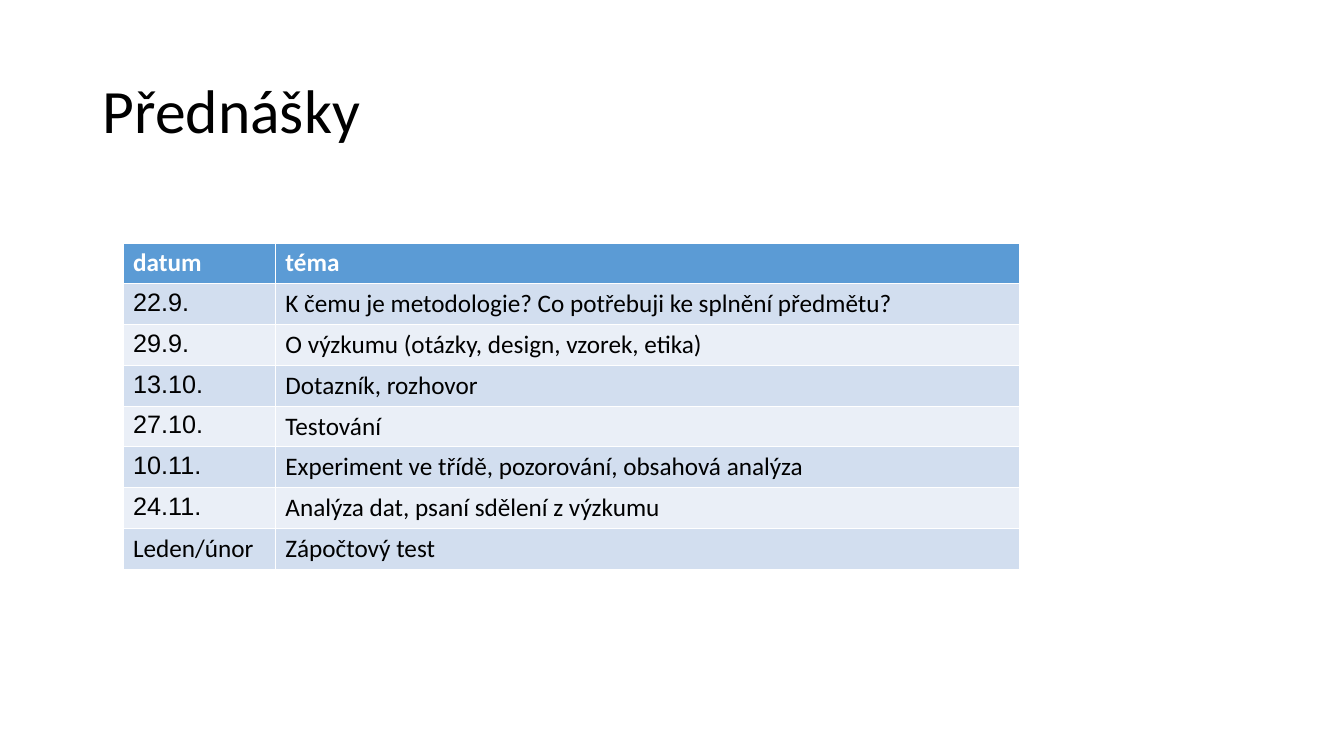
from pptx import Presentation
from pptx.dml.color import RGBColor
from pptx.enum.text import MSO_ANCHOR
from pptx.util import Inches, Pt

WHITE = RGBColor(0xFF, 0xFF, 0xFF)
BLACK = RGBColor(0x00, 0x00, 0x00)
HEADER_BLUE = RGBColor(0x5B, 0x9B, 0xD5)
BANDS = (RGBColor(0xEA, 0xEF, 0xF7), RGBColor(0xD2, 0xDE, 0xEF))

SLIDE_WIDTH, SLIDE_HEIGHT = 13.33, 7.5
DATE_SHARE = 0.17

LECTURES = [
    ("datum", "téma"),
    ("22.9.", "K čemu je metodologie? Co potřebuji ke splnění předmětu?"),
    ("29.9.", "O výzkumu (otázky, design, vzorek, etika)"),
    ("13.10.", "Dotazník, rozhovor"),
    ("27.10.", "Testování"),
    ("10.11.", "Experiment ve třídě, pozorování, obsahová analýza"),
    ("24.11.", "Analýza dat, psaní sdělení z výzkumu"),
    ("Leden/únor", "Zápočtový test"),
]


def style_font(paragraph, name, size, color, bold=False):
    font = paragraph.font
    font.name, font.size, font.bold = name, Pt(size), bold
    font.color.rgb = color


def add_heading(slide, left, top, width, height):
    frame = slide.shapes.add_textbox(
        Inches(left), Inches(top), Inches(width), Inches(height)).text_frame
    frame.word_wrap = True
    frame.vertical_anchor = MSO_ANCHOR.MIDDLE
    heading = frame.paragraphs[0]
    heading.text = "Přednášky"
    heading.line_spacing = 0.9
    style_font(heading, "Calibri", 44, BLACK)


def add_schedule(slide, left, top, width, height):
    schedule = slide.shapes.add_table(
        len(LECTURES), 2,
        Inches(left), Inches(top), Inches(width), Inches(height)).table
    schedule.columns[0].width = Inches(width * DATE_SHARE)
    schedule.columns[1].width = Inches(width * (1 - DATE_SHARE))
    for row, lecture in enumerate(LECTURES):
        is_header = row == 0
        for column, entry in enumerate(lecture):
            cell = schedule.cell(row, column)
            cell.fill.solid()
            cell.fill.fore_color.rgb = HEADER_BLUE if is_header else BANDS[row % 2]
            cell.text = entry
            is_numeric_date = column == 0 and entry[0].isdigit()
            style_font(cell.text_frame.paragraphs[0],
                       "Arial" if is_numeric_date else "Calibri", 18,
                       WHITE if is_header else BLACK, is_header)


def main():
    deck = Presentation()
    deck.slide_width, deck.slide_height = Inches(SLIDE_WIDTH), Inches(SLIDE_HEIGHT)
    slide = deck.slides.add_slide(deck.slide_layouts[6])
    add_heading(slide, 0.92, 0.4, 11.5, 1.45)
    add_schedule(slide, 1.22, 2.41, 8.89, 3.24)
    deck.save("out.pptx")


if __name__ == "__main__":
    main()
